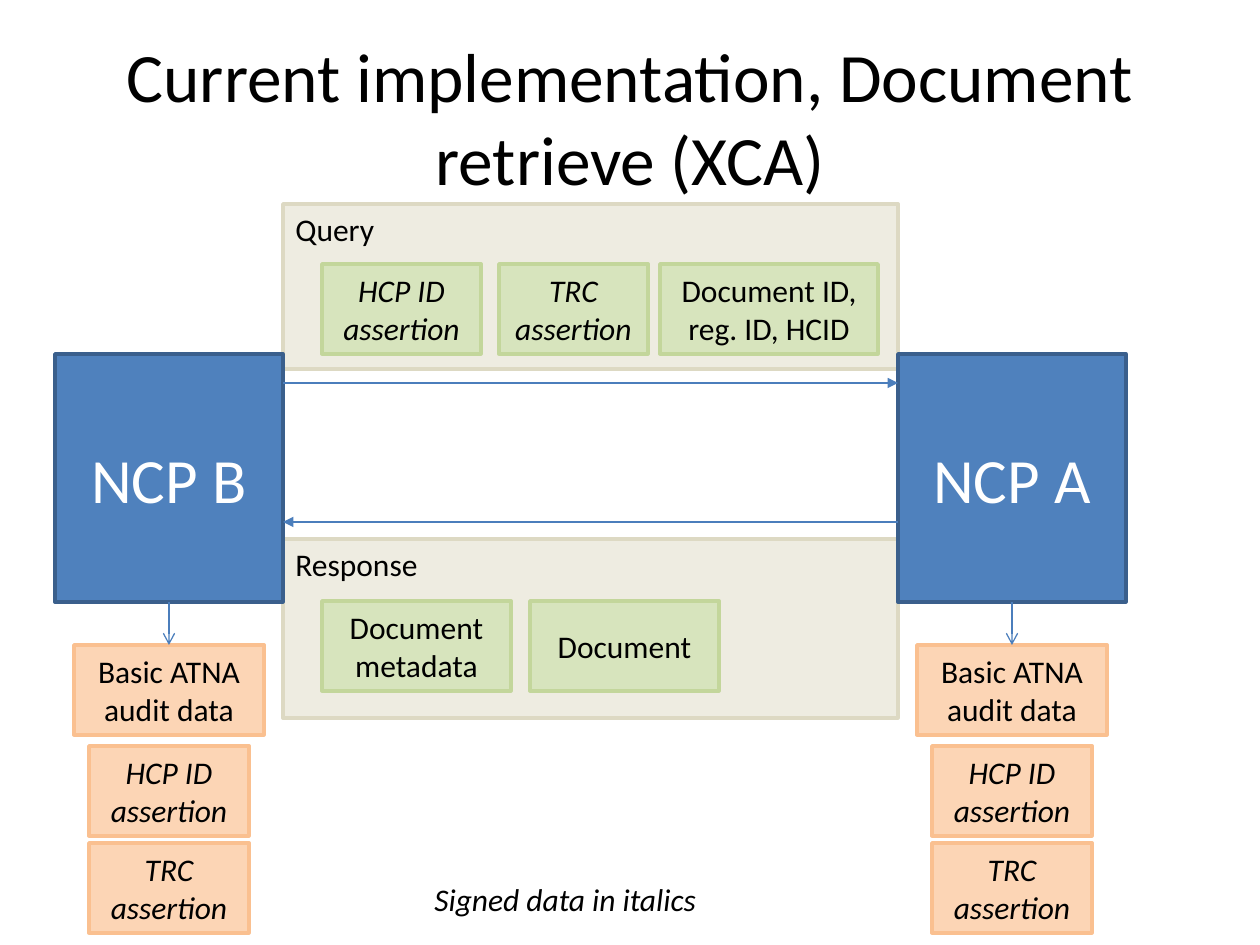
"""Build the slide on the current XCA document retrieve implementation."""
from lxml import etree
from pptx import Presentation, util as u
from pptx.dml.color import RGBColor
from pptx.enum import shapes, text
from pptx.oxml.ns import qn

SCALE = 914400 / 126
COLOURS = {
    "panel": ("EEECE1", "DDD9C3", "000000"),
    "node": ("4F81BD", "3A5F8C", "FFFFFF"),
    "payload": ("D7E4BD", "C3D69B", "000000"),
    "audit": ("FCD5B5", "FAC090", "000000"),
    "arrow": "4B7EBC",
    "ink": "000000",
}


def write(box, words, size, colour, align, anchor, italic=False, wrap=True):
    frame = box.text_frame
    frame.word_wrap = wrap
    frame.vertical_anchor = anchor
    para = frame.paragraphs[0]
    para.alignment = align
    span = para.add_run()
    span.text = words
    for name, value in {"name": "Calibri", "size": u.Pt(size), "italic": italic}.items():
        setattr(span.font, name, value)
    span.font.color.rgb = RGBColor.from_string(colour)


def add_box(page, kind, words, place, size=18, italic=False):
    fill, edge, ink = COLOURS[kind]
    box = page.shapes.add_shape(shapes.MSO_SHAPE.RECTANGLE, *[round(n * SCALE) for n in place])
    box.shadow.inherit = False
    box.fill.solid()
    box.fill.fore_color.rgb = RGBColor.from_string(fill)
    box.line.color.rgb = RGBColor.from_string(edge)
    box.line.width = u.Pt(2)
    panel = kind == "panel"
    align = text.PP_ALIGN.LEFT if panel else text.PP_ALIGN.CENTER
    anchor = text.MSO_ANCHOR.TOP if panel else text.MSO_ANCHOR.MIDDLE
    write(box, words, size, ink, align, anchor, italic)
    return box


deck = Presentation()
deck.slide_width, deck.slide_height = u.Inches(10), u.Inches(7.5)
page = deck.slides.add_slide(deck.slide_layouts[5])

title = page.shapes.title
for name, value in {"left": 63, "top": 38, "width": 1134, "height": 157}.items():
    setattr(title, name, round(value * SCALE))
write(title, "Current implementation, Document retrieve (XCA)", 39.6, COLOURS["ink"],
      text.PP_ALIGN.CENTER, text.MSO_ANCHOR.MIDDLE)

add_box(page, "panel", "Response", (283, 539, 615, 179))
add_box(page, "panel", "Query", (283, 204, 615, 165))

for words, left, top, width, italic in [
    ("HCP ID assertion", 322, 264, 159, True),
    ("TRC assertion", 499, 264, 149, True),
    ("Document ID, reg. ID, HCID", 660, 264, 218, False),
    ("Document metadata", 322, 601, 189, False),
    ("Document", 530, 601, 189, False),
]:
    add_box(page, "payload", words, (left, top, width, 90), italic=italic)

arrows = []
for words, left in [("NCP B", 55), ("NCP A", 898)]:
    node = add_box(page, "node", words, (left, 354, 228, 248), size=36)
    audit = add_box(page, "audit", "Basic ATNA audit data", (left + 19, 645, 190, 90))
    for assertion, top in [("HCP ID assertion", 746), ("TRC assertion", 843)]:
        add_box(page, "audit", assertion, (left + 34, top, 160, 90), italic=True)
    arrow = page.shapes.add_connector(shapes.MSO_CONNECTOR.STRAIGHT, 0, 0, 0, 0)
    arrow.begin_connect(node, 2)
    arrow.end_connect(audit, 0)
    arrows.append((arrow, "tailEnd", "arrow"))

for height, end in [(383, "tailEnd"), (522, "headEnd")]:
    points = [round(n * SCALE) for n in (283, height, 898, height)]
    arrow = page.shapes.add_connector(shapes.MSO_CONNECTOR.STRAIGHT, *points)
    arrows.append((arrow, end, "triangle"))

for arrow, end, head in arrows:
    arrow.line.color.rgb = RGBColor.from_string(COLOURS["arrow"])
    arrow.line.width = u.Pt(0.75)
    etree.SubElement(arrow.line._get_or_add_ln(), qn(f"a:{end}"), type=head)
    etree.SubElement(arrow._element.spPr, qn("a:effectLst"))

legend = page.shapes.add_textbox(*[round(n * SCALE) for n in (422, 874, 290, 50)])
write(legend, "Signed data in italics", 18, COLOURS["ink"], text.PP_ALIGN.LEFT,
      text.MSO_ANCHOR.TOP, italic=True, wrap=False)
legend.text_frame.auto_size = text.MSO_AUTO_SIZE.SHAPE_TO_FIT_TEXT

deck.save("out.pptx")
